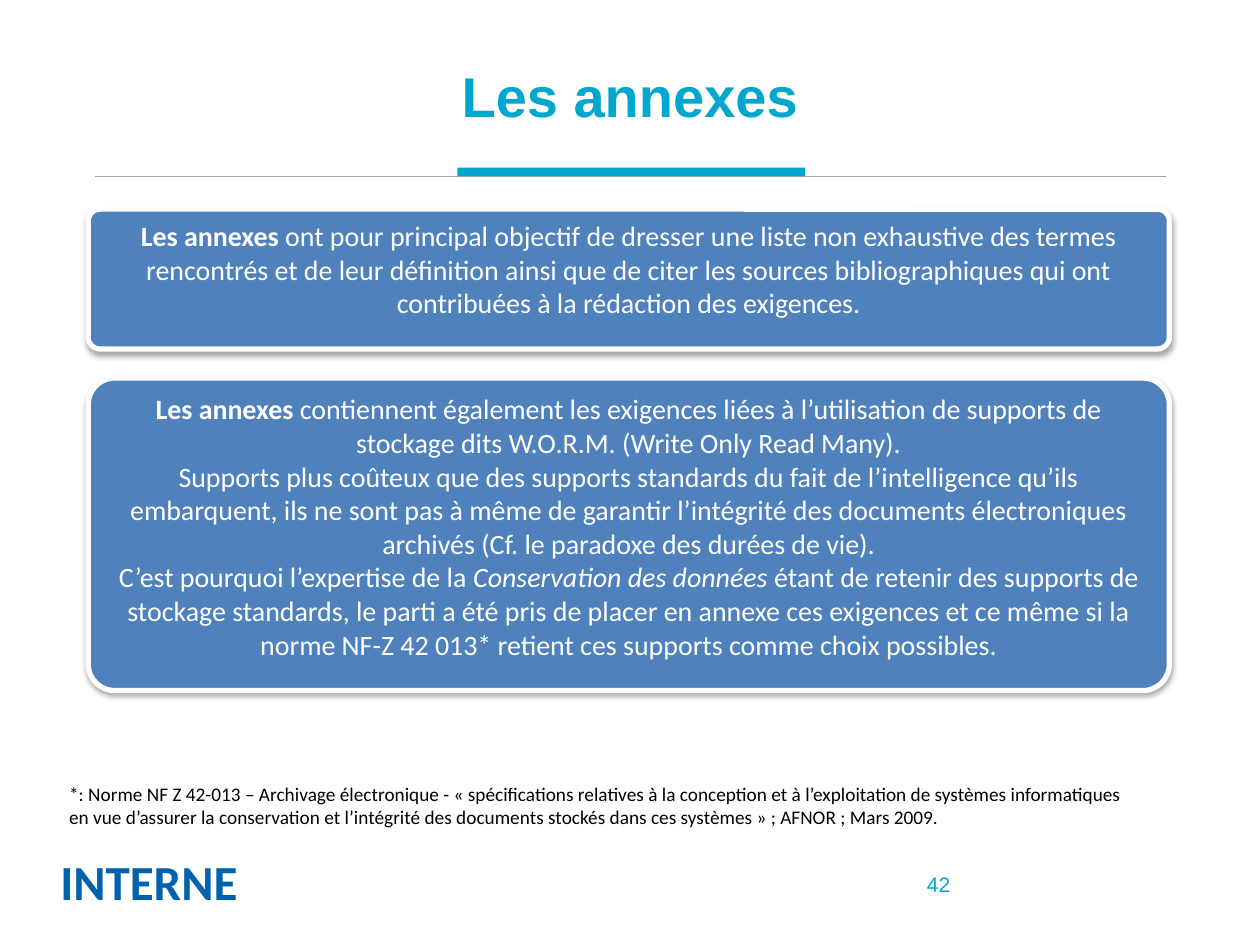
from lxml.etree import SubElement
from pptx import Presentation
from pptx.dml.color import RGBColor
from pptx.enum.shapes import MSO_CONNECTOR as Connector, MSO_SHAPE as Shape
from pptx.enum.text import MSO_ANCHOR as Anchor, MSO_AUTO_SIZE as AutoSize, PP_ALIGN as Align
from pptx.oxml.ns import qn
from pptx.util import Pt

CYAN, NAVY, BLUE, GREY = "02A7CE", "0062AC", "4F81BD", "A6A6A6"
WHITE, BLACK = "FFFFFF", "000000"

INTRO = [
    [("Les annexes ", "bold"),
     ("ont pour principal objectif de dresser une liste non exhaustive des termes rencontrés "
      "et de leur définition ainsi que de citer les sources bibliographiques qui ont "
      "contribuées à la rédaction des exigences.", "")],
]
WORM = [
    [("Les annexes ", "bold"),
     ("contiennent également les exigences liées à l’utilisation de supports de stockage "
      "dits W.O.R.M. (Write Only Read Many).", "")],
    [("Supports plus coûteux que des supports standards du fait de l’intelligence qu’ils "
      "embarquent, ils ne sont pas à même de garantir l’intégrité des documents "
      "électroniques archivés (Cf. le paradoxe des durées de vie).", "")],
    [("C’est pourquoi l’expertise de la ", ""),
     ("Conservation des données ", "italic"),
     ("étant de retenir des supports de stockage standards, le parti a été pris de placer "
      "en annexe ces exigences et ce même si la norme NF-Z 42 013* retient ces supports "
      "comme choix possibles.", "")],
]
FOOTNOTE = (
    "*: Norme NF Z 42-013 – Archivage électronique - « spécifications relatives à la "
    "conception et à l’exploitation de systèmes informatiques en vue d’assurer la "
    "conservation et l’intégrité des documents stockés dans ces systèmes » ; AFNOR ; "
    "Mars 2009."
)


def color(value):
    """Turn a hex string into a colour."""
    return RGBColor.from_string(value)


def set_font(span, size, name, tint, style=""):
    """Format one run of text."""
    font = span.font
    font.size, font.name = Pt(size), name
    font.color.rgb = color(tint)
    font.bold, font.italic = style == "bold", style == "italic"


def add_label(page, box, text, size, name, tint, style="", align=Align.LEFT,
              anchor=Anchor.TOP, wrap=True, grow=False):
    """Place a text box holding one formatted paragraph."""
    frame = page.shapes.add_textbox(*map(Pt, box)).text_frame
    frame.word_wrap = wrap
    frame.auto_size = AutoSize.SHAPE_TO_FIT_TEXT if grow else AutoSize.NONE
    frame.vertical_anchor = anchor
    frame.text = text
    para = frame.paragraphs[0]
    para.alignment = align
    set_font(para.runs[0], size, name, tint, style)


def add_soft_shadow(shape):
    """Give a shape a soft shadow straight below it."""
    shape.shadow.inherit = False
    effects = shape._element.spPr.find(qn("a:effectLst"))
    shadow = SubElement(effects, qn("a:outerShdw"), blurRad=str(Pt(3.1)), dist=str(Pt(1.8)),
                        dir="5400000", rotWithShape="0")
    tint = SubElement(shadow, qn("a:srgbClr"), val=BLACK)
    SubElement(tint, qn("a:alpha"), val="35000")


def add_header(page, left, top, width, height):
    """Draw the title with its accent bar and rule below."""
    bar = page.shapes.add_shape(Shape.RECTANGLE, Pt(left + 225.4), Pt(top + 86.4),
                                Pt(198.7), Pt(5.4))
    bar.shadow.inherit = False
    bar.fill.solid()
    bar.fill.fore_color.rgb = color(CYAN)
    bar.line.fill.background()
    rule_y = Pt(top + height + 1.4)
    rule = page.shapes.add_connector(Connector.STRAIGHT, Pt(left + 18), rule_y,
                                     Pt(left + width - 18), rule_y)
    rule.line.color.rgb = color(GREY)
    rule.line.width = Pt(0.75)
    SubElement(rule._element.spPr, qn("a:effectLst"))
    add_label(page, (left, top, width, height), "Les annexes", 32, "Arial", CYAN, "bold",
              Align.CENTER, Anchor.MIDDLE)


def add_card(page, left, top, width, height, paragraphs):
    """Draw a rounded blue card with centred text."""
    card = page.shapes.add_shape(Shape.ROUNDED_RECTANGLE, Pt(left), Pt(top),
                                 Pt(width), Pt(height))
    card.adjustments[0] = 0.085
    card.fill.solid()
    card.fill.fore_color.rgb = color(BLUE)
    card.line.color.rgb = color(WHITE)
    card.line.width = Pt(3)
    add_soft_shadow(card)
    frame = card.text_frame
    frame.word_wrap = True
    frame.vertical_anchor = Anchor.TOP
    for index, spans in enumerate(paragraphs):
        para = frame.add_paragraph() if index else frame.paragraphs[0]
        para.alignment = Align.CENTER
        for text, style in spans:
            span = para.add_run()
            span.text = text
            set_font(span, 16, "Calibri", WHITE, style)


def add_footer(page, left, top):
    """Place the footnote, the confidentiality mark and the page number."""
    add_label(page, (left + 5, top, 617.8, 33.8), FOOTNOTE, 11, "Calibri", BLACK, grow=True)
    add_label(page, (left, top + 39.6, 116.6, 41), "INTERNE", 28, "Calibri", NAVY, "bold",
              wrap=False, grow=True)
    add_label(page, (left + 354.9, top + 47.5, 167.8, 28.8), "42", 12, "Arial", CYAN,
              align=Align.RIGHT, anchor=Anchor.MIDDLE)


def main():
    """Build the slide and save it."""
    deck = Presentation()
    deck.slide_width, deck.slide_height = Pt(720), Pt(540)
    page = deck.slides.add_slide(deck.slide_layouts[6])
    add_header(page, 36, 9.4, 648, 90)
    add_card(page, 50.4, 119.5, 617.8, 79.9, INTRO)
    add_card(page, 50.4, 216, 617.8, 178.6, WORM)
    add_footer(page, 27.4, 443.5)
    deck.save("out.pptx")


if __name__ == "__main__":
    main()
